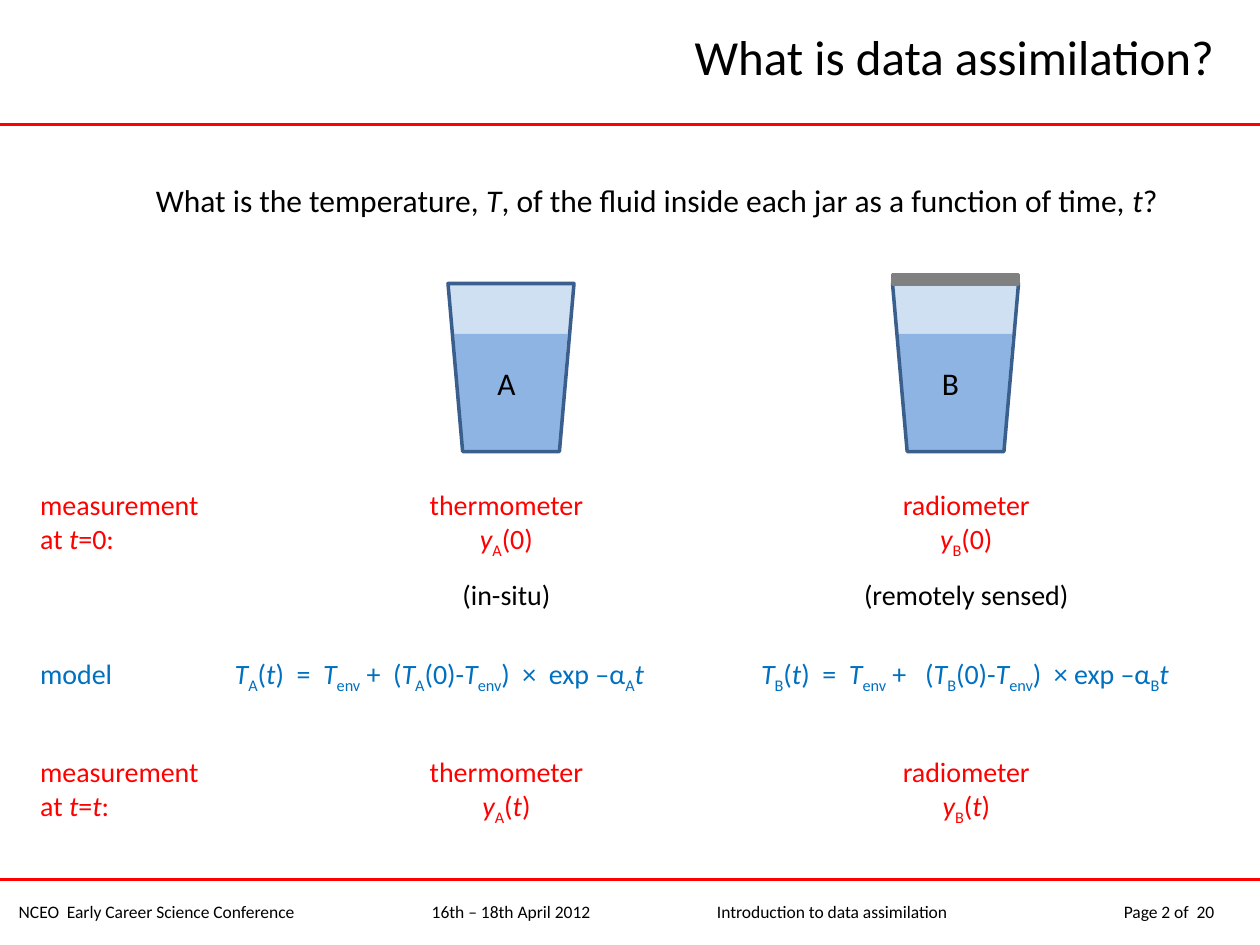
from lxml.etree import SubElement as Sub
from pptx import Presentation
from pptx.dml.color import RGBColor
from pptx.enum.shapes import MSO_CONNECTOR as Conn, MSO_SHAPE as Shape
from pptx.enum.text import MSO_ANCHOR as Anchor, PP_ALIGN as Align
from pptx.oxml.ns import qn
from pptx.util import Pt

HUES = {"ink": "000000", "red": "FF0000", "blue": "0070C0",
        "fluid": "8EB4E3", "glass": "3A5F8C", "lid": "808080"}

# In all wording, *...* is italic and _..._ is subscript; a tab goes to the next stop.
TITLE = "What is data assimilation?"
ASK = "What is the temperature, *T*, of the fluid inside each jar as a function of time, *t*?"
JARS = "A\tB"
FOOT = ("NCEO  Early Career Science Conference\t16th – 18th April 2012\t"
        "Introduction to data assimilation\tPage 2 of  20")
STOPS = [236, 399, 631.5]
WIDE, MODEL = [147.6, 252, 273.6], [89.3, 292, 308.6]

# top, hue, column widths, cells (each a list of lines)
ROWS = [
    (275.8, "red", WIDE, [["measurement", "at *t*=0:"],
                          ["thermometer", "*y*_A_(0)"],
                          ["radiometer", "*y*_B_(0)"]]),
    (326.9, "ink", WIDE, [[], ["(in-situ)"], ["(remotely sensed)"]]),
    (372.2, "blue", MODEL, [
        ["model"],
        ["*T*_A_(*t*)  =  *T*_env_ +  (*T*_A_(0)-*T*_env_)  ×  exp –α_A_*t*"],
        ["*T*_B_(*t*)  =  *T*_env_ +   (*T*_B_(0)-*T*_env_)  × exp –α_B_*t*"]]),
    (428.4, "red", WIDE, [["measurement", "at *t*=*t*:"],
                          ["thermometer", "*y*_A_(*t*)"],
                          ["radiometer", "*y*_B_(*t*)"]]),
]
LEFT, ROW_H = 15.8, 39.6
JAR_X, JAR_Y, JAR_W, JAR_H, PITCH = 256, 162, 72, 96, 254
RULES = [71.3, 502.6]


def rgb(hue):
    return RGBColor.from_string(HUES[hue])


def add_runs(para, text):
    """Turn marked-up text into runs."""
    for i, part in enumerate(text.split("*")):
        for j, bit in enumerate(part.split("_")):
            if not bit:
                continue
            run = para.add_run()
            run.text = bit
            if i % 2:
                run.font.italic = True
            if j % 2:
                run._r.get_or_add_rPr().set("baseline", "-25000")


def write(frame, lines, size, hue="ink", align=Align.LEFT, stops=()):
    for n, text in enumerate(lines):
        para = frame.add_paragraph() if n else frame.paragraphs[0]
        para.alignment = align
        if stops:
            tabs = Sub(para._p.get_or_add_pPr(), qn("a:tabLst"))
            for stop in stops:
                Sub(tabs, qn("a:tab"), pos=str(int(Pt(stop))), algn="l")
        add_runs(para, text)
        font = para.font
        font.name, font.size, font.bold = "Calibri", Pt(size), False
        font.color.rgb = rgb(hue)


def add_text(slide, box, text, size, wrap=True, **look):
    frame = slide.shapes.add_textbox(*map(Pt, box)).text_frame
    frame.word_wrap = wrap
    write(frame, [text], size, **look)
    return frame


def add_rule(slide, y):
    rule = slide.shapes.add_connector(Conn.STRAIGHT, 0, Pt(y), Pt(720), Pt(y))
    rule.line.color.rgb, rule.line.width = rgb("red"), Pt(1.5)
    Sub(rule._element.spPr, qn("a:effectLst"))


def add_part(group, kind, box, fill, edge=None, taper=None, alpha=None):
    part = group.shapes.add_shape(kind, *map(Pt, box))
    part.shadow.inherit = False
    part.fill.solid()
    part.fill.fore_color.rgb = rgb(fill)
    if edge:
        part.line.color.rgb, part.line.width = rgb(edge), Pt(2)
    else:
        part.line.fill.background()
    if taper:
        part.adjustments[0], part.rotation = taper, 180
    if alpha:
        color = part._element.spPr.find(qn("a:solidFill"))[0]
        Sub(color, qn("a:alpha"), val=str(alpha * 1000))


def add_jar(slide, x, lid):
    jar = slide.shapes.add_group_shape()
    add_part(jar, Shape.TRAPEZOID, (x + 3.5, 190.8, 64.8, 67.7), "fluid", taper=0.08)
    add_part(jar, Shape.TRAPEZOID, (x, JAR_Y, JAR_W, JAR_H), "fluid", "glass", 0.116, 41)
    if lid:
        add_part(jar, Shape.RECTANGLE, (x, JAR_Y - 5.2, JAR_W, 5.8), "lid", "lid")


def add_row(slide, top, hue, widths, cells):
    table = slide.shapes.add_table(1, len(cells), Pt(LEFT), Pt(top),
                                   Pt(sum(widths)), Pt(ROW_H)).table
    for n, (width, lines) in enumerate(zip(widths, cells)):
        table.columns[n].width = Pt(width)
        cell = table.cell(0, n)
        cell.fill.background()
        write(cell.text_frame, lines, 16, hue, Align.CENTER if n else Align.LEFT)


def main():
    prs = Presentation()
    prs.slide_width, prs.slide_height = Pt(720), Pt(540)
    slide = prs.slides.add_slide(prs.slide_layouts[6])
    for y in RULES:
        add_rule(slide, y)
    add_text(slide, (3.6, 511.2, 713.5, 19.4), FOOT, 10, stops=STOPS)
    title = add_text(slide, (139, 10.1, 561.6, 43.9), TITLE, 28, align=Align.RIGHT)
    title.vertical_anchor = Anchor.MIDDLE
    for n in range(2):
        add_jar(slide, JAR_X + n * PITCH, lid=n == 1)
    add_text(slide, (82, 100.1, 589.7, 28.8), ASK, 18, wrap=False)
    for row in ROWS:
        add_row(slide, *row)
    add_text(slide, (277.2, 204.5, 285, 28.8), JARS, 18, stops=[PITCH])
    prs.save("out.pptx")


if __name__ == "__main__":
    main()
